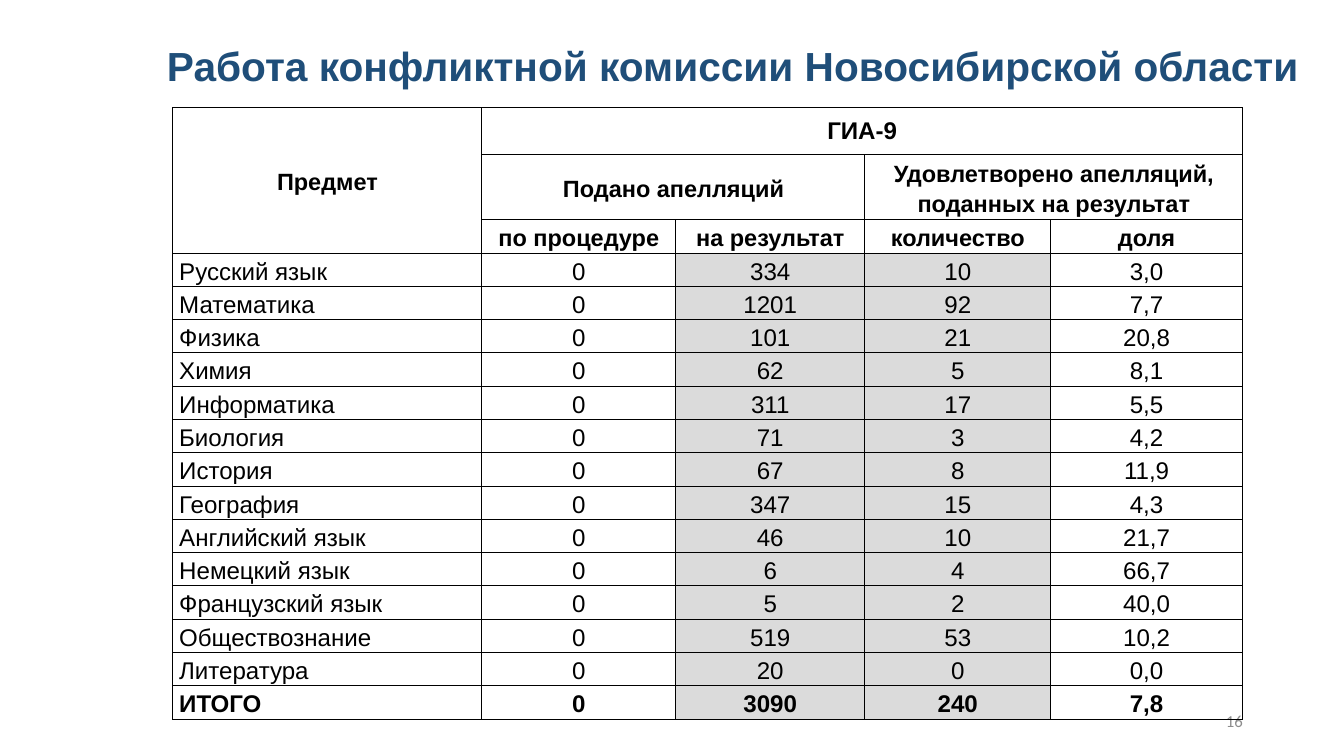
from lxml.etree import SubElement
from pptx import Presentation
from pptx.dml.color import RGBColor
from pptx.enum.text import MSO_ANCHOR, PP_ALIGN
from pptx.oxml.ns import qn
from pptx.util import Cm, Pt

TITLE = "Работа конфликтной комиссии Новосибирской области"
PAGE_NUMBER = "16"
HEADERS = [
    ("Предмет", "ГИА-9", "", "", ""),
    ("", "Подано апелляций", "", "Удовлетворено апелляций, поданных на результат", ""),
    ("", "по процедуре", "на результат", "количество", "доля"),
]
SUBJECTS = [
    ("Русский язык", "0", "334", "10", "3,0"),
    ("Математика", "0", "1201", "92", "7,7"),
    ("Физика", "0", "101", "21", "20,8"),
    ("Химия", "0", "62", "5", "8,1"),
    ("Информатика", "0", "311", "17", "5,5"),
    ("Биология", "0", "71", "3", "4,2"),
    ("История", "0", "67", "8", "11,9"),
    ("География", "0", "347", "15", "4,3"),
    ("Английский язык", "0", "46", "10", "21,7"),
    ("Немецкий язык", "0", "6", "4", "66,7"),
    ("Французский язык", "0", "5", "2", "40,0"),
    ("Обществознание", "0", "519", "53", "10,2"),
    ("Литература", "0", "20", "0", "0,0"),
]
TOTAL = ("ИТОГО", "0", "3090", "240", "7,8")
MERGES = [((0, 0), (2, 0)), ((0, 1), (0, 4)), ((1, 1), (1, 2)), ((1, 3), (1, 4))]
COLUMN_WIDTHS = [8.59, 5.38, 5.26, 5.16, 5.33]
TOP_HEIGHTS = [1.3, 1.81]
TABLE_LEFT, TABLE_TOP, TABLE_HEIGHT = 4.8, 3, 16.97
WHITE, GREY, BLACK = "FFFFFF", "DBDBDB", "000000"
COUNT_COLUMNS, SHARE_COLUMN = (2, 3), 4
TITLE_FONT = {"name": "Arial", "size": Pt(32), "bold": True}
NUMBER_FONT = {"name": "Calibri", "size": Pt(13.2), "bold": False}


def color(value):
    return RGBColor.from_string(value)


def write(frame, text, font, ink, align, spacing=1.0):
    para = frame.paragraphs[0]
    para.alignment = align
    para.line_spacing = spacing
    span = para.add_run()
    span.text = text
    for name, value in font.items():
        setattr(span.font, name, value)
    span.font.color.rgb = color(ink)


def add_text(page, place, text, font, ink, align, wrap):
    box = page.shapes.add_textbox(*[Cm(value) for value in place])
    box.text_frame.word_wrap = wrap
    box.text_frame.vertical_anchor = MSO_ANCHOR.MIDDLE
    write(box.text_frame, text, font, ink, align)


def add_borders(cell):
    properties = cell._tc.get_or_add_tcPr()
    for side in ("lnL", "lnR", "lnT", "lnB"):
        line = SubElement(properties, qn(f"a:{side}"), w=str(Pt(1)))
        fill = SubElement(line, qn("a:solidFill"))
        SubElement(fill, qn("a:srgbClr"), val=BLACK)


def format_cell(cell, row, column):
    margins = {"margin_left": Cm(0.18), "margin_right": Cm(0.18),
               "margin_top": 0, "margin_bottom": 0,
               "vertical_anchor": MSO_ANCHOR.MIDDLE}
    for name, value in margins.items():
        setattr(cell, name, value)
    add_borders(cell)
    body = row >= len(HEADERS)
    if column == SHARE_COLUMN and row > 1:
        cell.fill.background()
    else:
        cell.fill.solid()
        shaded = body and column in COUNT_COLUMNS
        cell.fill.fore_color.rgb = color(GREY if shaded else WHITE)


def add_appeals_table(page):
    rows = HEADERS + SUBJECTS + [TOTAL]
    shape = page.shapes.add_table(
        len(rows), len(COLUMN_WIDTHS), Cm(TABLE_LEFT), Cm(TABLE_TOP),
        Cm(sum(COLUMN_WIDTHS)), Cm(TABLE_HEIGHT))
    table = shape.table
    table.first_row = table.horz_banding = False
    for column, width in zip(table.columns, COLUMN_WIDTHS):
        column.width = Cm(width)
    plain_count = len(rows) - len(TOP_HEIGHTS)
    plain_height = (TABLE_HEIGHT - sum(TOP_HEIGHTS)) / plain_count
    for row, height in zip(table.rows, TOP_HEIGHTS + [plain_height] * plain_count):
        row.height = Cm(height)
    for start, end in MERGES:
        table.cell(*start).merge(table.cell(*end))
    for row, texts in enumerate(rows):
        header = row < len(HEADERS)
        for column, text in enumerate(texts):
            cell = table.cell(row, column)
            format_cell(cell, row, column)
            if not text:
                continue
            exam = (row, column) == (0, 1)
            font = {"name": "Arial", "bold": header or texts is TOTAL,
                    "size": Pt(18.5 if header and not exam else 19)}
            align = PP_ALIGN.CENTER if header or column else PP_ALIGN.LEFT
            write(cell.text_frame, text, font, BLACK, align, 1.0 if exam else 1.15)


def main():
    deck = Presentation()
    deck.slide_width, deck.slide_height = Cm(37.34), Cm(21.01)
    page = deck.slides.add_slide(deck.slide_layouts[6])
    add_text(page, (26.37, 19.46, 8.41, 1.12), PAGE_NUMBER,
             NUMBER_FONT, "8C8C8C", PP_ALIGN.RIGHT, True)
    add_text(page, (4.27, 0.99, 32.21, 1.63), TITLE,
             TITLE_FONT, "1F4E79", PP_ALIGN.CENTER, False)
    add_appeals_table(page)
    deck.save("out.pptx")


if __name__ == "__main__":
    main()
